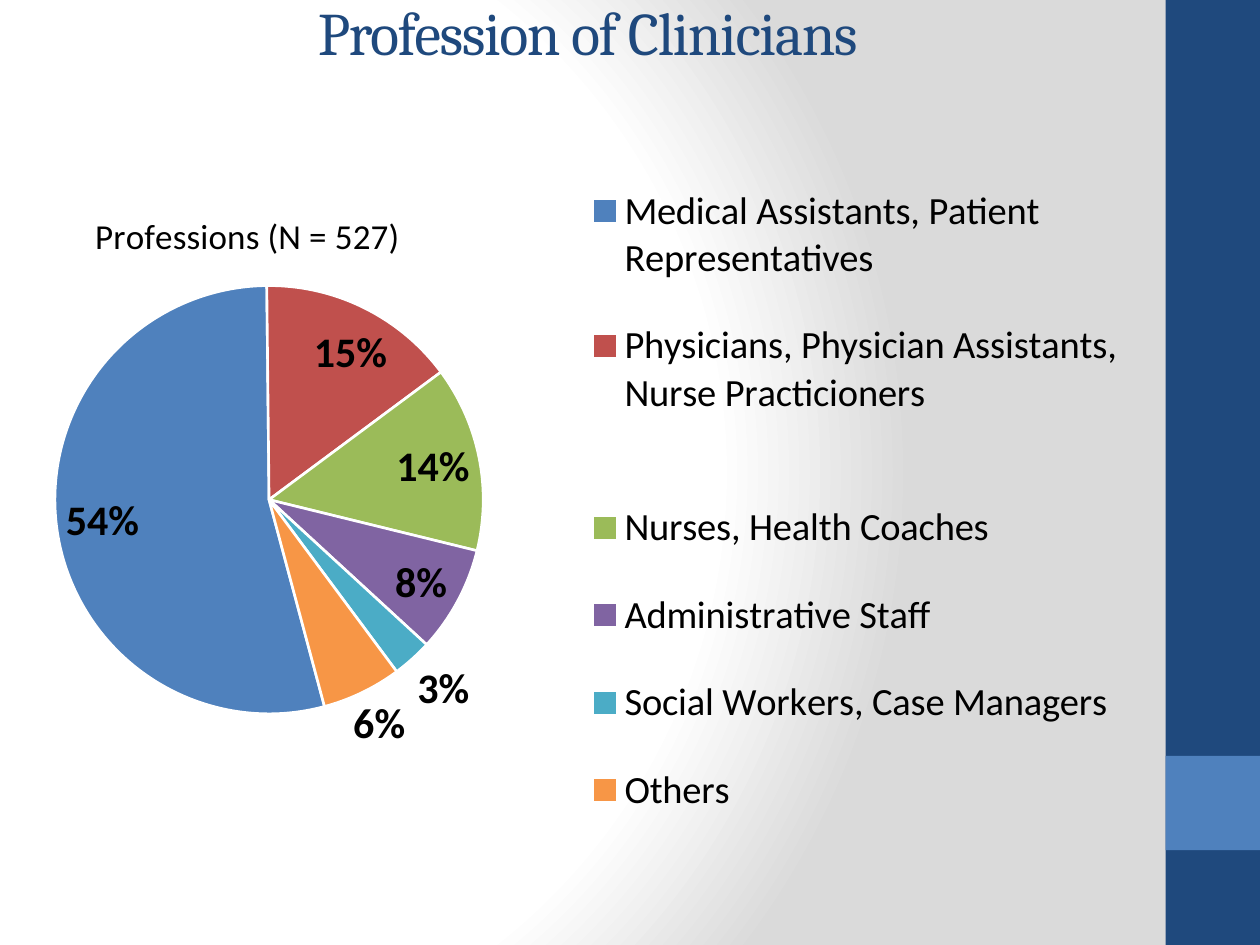
from lxml.etree import SubElement
from pptx import Presentation
from pptx.chart.data import CategoryChartData
from pptx.dml.color import RGBColor
from pptx.enum.chart import XL_CHART_TYPE, XL_LABEL_POSITION, XL_LEGEND_POSITION
from pptx.enum.shapes import MSO_SHAPE
from pptx.enum.text import MSO_ANCHOR, PP_ALIGN
from pptx.oxml import parse_xml
from pptx.oxml.ns import nsdecls, qn
from pptx.util import Cm, Pt

PROFESSIONS = [
    ("Medical Assistants, Patient Representatives", 0.54, "4F81BD"),
    ("Physicians, Physician Assistants, \nNurse Practicioners\n ", 0.15, "C0504D"),
    ("Nurses, Health Coaches", 0.14, "9BBB59"),
    ("Administrative Staff", 0.08, "8064A2"),
    ("Social Workers, Case Managers", 0.03, "4BACC6"),
    ("Others", 0.06, "F79646"),
]


def rgb(value):
    return RGBColor.from_string(value)


def set_font(font, name, size, color, bold=False):
    font.name = name
    font.size = Pt(size)
    font.bold = bold
    font.color.rgb = rgb(color)


def make_layout(x, y, w=None, h=None, inner=False):
    """Manual chart layout, in fractions of the chart area."""
    layout = parse_xml(f"<c:layout {nsdecls('c')}/>")
    manual = SubElement(layout, qn("c:manualLayout"))
    values = [("xMode", "edge"), ("yMode", "edge"), ("x", x), ("y", y), ("w", w), ("h", h)]
    if inner:
        values.insert(0, ("layoutTarget", "inner"))
    for tag, value in values:
        if value is not None:
            SubElement(manual, qn(f"c:{tag}")).set("val", str(value))
    return layout


class SlideBuilder:
    navy, blue, black, white = "1F497D", "4F81BD", "000000", "FFFFFF"
    title_font, body_font = "Cambria", "Calibri"

    def __init__(self, prs):
        self.s = prs.slides.add_slide(prs.slide_layouts[5])

    def background(self, stops):
        gs = "".join(
            f'<a:gs pos="{pos * 1000}"><a:srgbClr val="{color}"/></a:gs>' for pos, color in stops
        )
        bg = parse_xml(
            f"<p:bg {nsdecls('p', 'a')}><p:bgPr><a:gradFill><a:gsLst>{gs}</a:gsLst>"
            '<a:path path="circle"><a:fillToRect l="20000" t="50000" r="100000" b="50000"/>'
            "</a:path></a:gradFill><a:effectLst/></p:bgPr></p:bg>"
        )
        self.s.element.cSld.insert(0, bg)

    def block(self, x, y, w, h, color):
        sp = self.s.shapes.add_shape(MSO_SHAPE.RECTANGLE, Cm(x), Cm(y), Cm(w), Cm(h))
        sp.shadow.inherit = False
        sp.fill.solid()
        sp.fill.fore_color.rgb = rgb(color)
        sp.line.fill.background()

    def title(self, text, x, y, w, h):
        sp = self.s.shapes.title
        sp.left, sp.top, sp.width, sp.height = Cm(x), Cm(y), Cm(w), Cm(h)
        tf = sp.text_frame
        tf.vertical_anchor = MSO_ANCHOR.MIDDLE
        p = tf.paragraphs[0]
        p.alignment = PP_ALIGN.CENTER
        r = p.add_run()
        r.text = text
        set_font(r.font, self.title_font, 34.5, self.navy)
        r.font._element.set("spc", "-80")

    def pie(self, title, rows, x, y, w, h):
        data = CategoryChartData(number_format="0%")
        data.categories = [name for name, _, _ in rows]
        data.add_series("Series 1", [value for _, value, _ in rows])
        chart = self.s.shapes.add_chart(
            XL_CHART_TYPE.PIE, Cm(x), Cm(y), Cm(w), Cm(h), data
        ).chart
        set_font(chart.font, self.body_font, 10, self.black)

        # Chart title
        chart.has_title = True
        r = chart.chart_title.text_frame.paragraphs[0].add_run()
        r.text = title
        set_font(r.font, self.body_font, 20, self.black)

        # Legend
        chart.has_legend = True
        chart.legend.position = XL_LEGEND_POSITION.RIGHT
        chart.legend.include_in_layout = False
        set_font(chart.legend.font, self.body_font, 22, self.black)

        # Slices
        plot = chart.plots[0]
        plot.vary_by_categories = True
        series = plot.series[0]
        for i, (_, _, color) in enumerate(rows):
            fmt = series.points[i].format
            fmt.fill.solid()
            fmt.fill.fore_color.rgb = rgb(color)
            fmt.line.color.rgb = rgb(self.white)
            fmt.line.width = Pt(1.5)

        # Slice labels
        labels = series.data_labels
        labels.show_value = True
        labels.number_format = "0%"
        labels.number_format_is_linked = False
        labels.position = XL_LABEL_POSITION.BEST_FIT
        set_font(labels.font, self.body_font, 24, self.black, bold=True)

        # Rotation and placement
        root = chart.element.find(qn("c:chart"))
        area = root.find(qn("c:plotArea"))
        pie = area.find(qn("c:pieChart"))
        for tag, parent in (("c:firstSliceAng", pie), ("c:layout", area)):
            for old in parent.findall(qn(tag)):
                parent.remove(old)
        SubElement(pie, qn("c:firstSliceAng")).set("val", "165")
        area.insert(0, make_layout(0.042, 0.222, 0.353, 0.634, inner=True))
        for parent, before, layout in (
            ("c:title", "c:tx", make_layout(0.07, 0.23)),
            ("c:legend", "c:legendPos", make_layout(0.48, 0.17, 0.45, 0.74)),
        ):
            element = root.find(qn(parent))
            for old in element.findall(qn("c:layout")):
                element.remove(old)
            element.find(qn(before)).addnext(layout)


def main():
    prs = Presentation()
    prs.slide_width, prs.slide_height = Cm(25.4), Cm(19.05)
    b = SlideBuilder(prs)
    b.background([(0, "FFFFFF"), (75, "FFFFFF"), (100, "DADADA")])

    # Side band with accent square
    b.block(23.5, 0, 1.9, 19.05, b.navy)
    b.block(23.5, 15.24, 1.9, 1.9, b.blue)

    # Title and chart
    b.title("Profession of Clinicians", 1.27, -0.64, 21.16, 2.54)
    b.pie("Professions (N = 527)", PROFESSIONS, 0.08, -0.3, 24.46, 19.25)
    prs.save("out.pptx")


if __name__ == "__main__":
    main()
